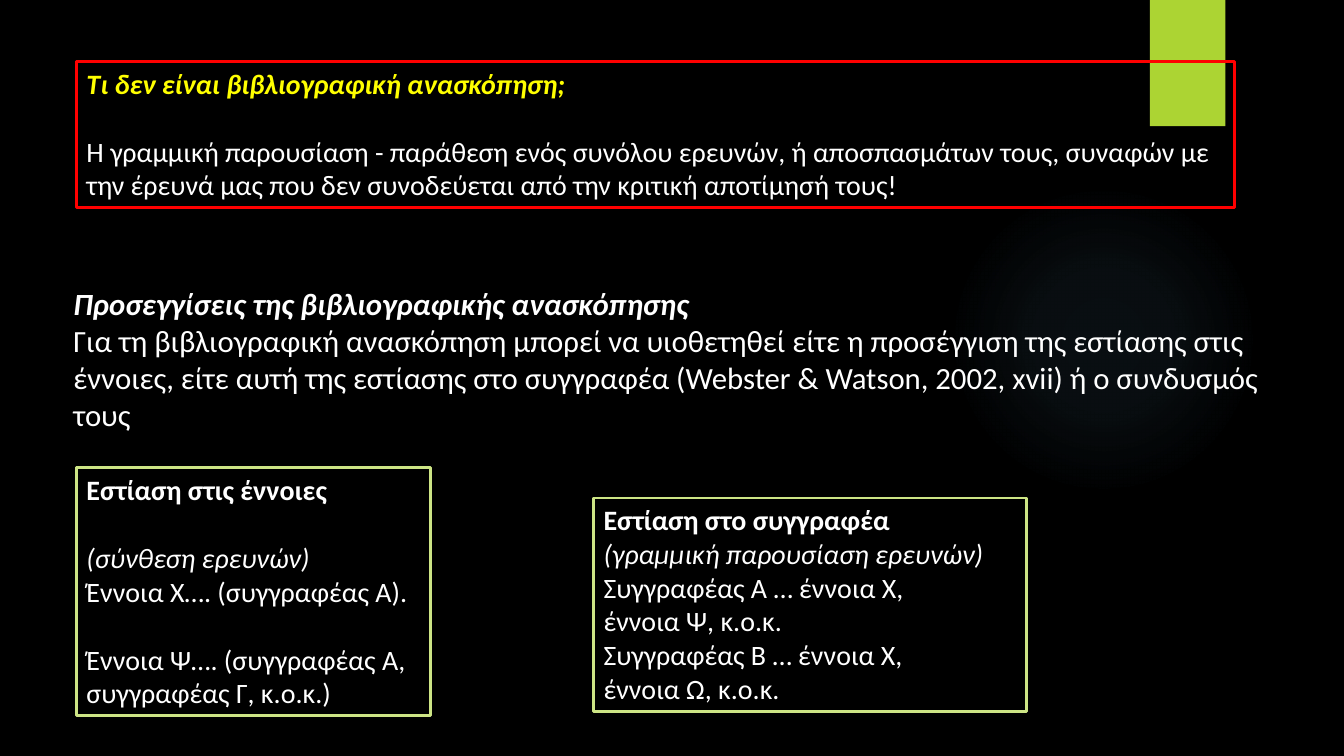
from dataclasses import dataclass

from lxml.etree import SubElement as Sub
from pptx import Presentation
from pptx.dml.color import RGBColor as RGB
from pptx.enum.shapes import MSO_SHAPE as Shape
from pptx.enum.text import MSO_ANCHOR as Anchor, MSO_AUTO_SIZE as Auto, PP_ALIGN as Align
from pptx.oxml.ns import qn
from pptx.util import Cm, Pt


@dataclass(frozen=True)
class Theme:
    font: str = "Calibri"
    body: int = 20
    lead: int = 22
    gap: float = 24.4
    rule: int = 2
    back: RGB = RGB(0x00, 0x00, 0x00)
    text: RGB = RGB(0xFF, 0xFF, 0xFF)
    title: RGB = RGB(0xFF, 0xFF, 0x00)
    alert: RGB = RGB(0xFF, 0x00, 0x00)
    frame: RGB = RGB(0xCD, 0xE5, 0x85)
    tab: RGB = RGB(0xAC, 0xD4, 0x33)
    glow: str = "7AC4F0"


@dataclass(frozen=True)
class Line:
    text: str
    bold: bool = False
    slant: bool = False
    gap: bool = False
    color: RGB = Theme.text


THEME = Theme()

WARNING = [
    Line("Τι δεν είναι βιβλιογραφική ανασκόπηση;", bold=True, slant=True, color=THEME.title),
    Line("Η γραμμική παρουσίαση - παράθεση ενός συνόλου ερευνών, ή αποσπασμάτων τους, "
         "συναφών με την έρευνά μας που δεν συνοδεύεται από την κριτική αποτίμησή τους!", gap=True),
]
METHODS = [
    Line("Προσεγγίσεις της βιβλιογραφικής ανασκόπησης", bold=True, slant=True),
    Line("Για τη βιβλιογραφική ανασκόπηση μπορεί να υιοθετηθεί είτε η προσέγγιση της εστίασης "
         "στις έννοιες, είτε αυτή της εστίασης στο συγγραφέα (Webster & Watson, 2002, xvii) "
         "ή ο συνδυσμός τους"),
]
CONCEPTS = [
    Line("Εστίαση στις έννοιες", bold=True),
    Line("(σύνθεση ερευνών)", slant=True, gap=True),
    Line("Έννοια Χ…. (συγγραφέας Α)."),
    Line("Έννοια Ψ…. (συγγραφέας Α, συγγραφέας Γ, κ.ο.κ.)", gap=True),
]
AUTHORS = [
    Line("Εστίαση στο συγγραφέα", bold=True),
    Line("(γραμμική παρουσίαση ερευνών)", slant=True),
    Line("Συγγραφέας Α … έννοια Χ,"),
    Line("έννοια Ψ, κ.ο.κ."),
    Line("Συγγραφέας Β … έννοια Χ,"),
    Line("έννοια Ω, κ.ο.κ."),
]


def write(frame, lines, size):
    frame.word_wrap = True
    frame.auto_size = Auto.SHAPE_TO_FIT_TEXT
    frame.vertical_anchor = Anchor.TOP
    for i, line in enumerate(lines):
        para = frame.add_paragraph() if i else frame.paragraphs[0]
        para.alignment = Align.LEFT
        if line.gap:
            para.space_before = Pt(THEME.gap)
        run = para.add_run()
        run.text = line.text
        font = run.font
        font.name, font.size = THEME.font, Pt(size)
        font.bold, font.italic = line.bold, line.slant
        font.color.rgb = line.color


def add_plain(slide, kind, area):
    """Add a preset shape with neither shadow nor outline."""
    shape = slide.shapes.add_shape(kind, *map(Cm, area))
    shape.shadow.inherit = False
    shape.line.fill.background()
    return shape


def add_glow(slide, area):
    """Add a circle that fades out from its centre."""
    glow = add_plain(slide, Shape.OVAL, area)
    glow.fill.background()
    props = glow.fill._xPr
    empty = props.find(qn("a:noFill"))
    grad = empty.makeelement(qn("a:gradFill"), {"rotWithShape": "1"})
    props.replace(empty, grad)
    stops = Sub(grad, qn("a:gsLst"))
    for place, alpha in ((0, 7), (36, 6), (69, 0)):
        stop = Sub(stops, qn("a:gs"), pos=str(place * 1000))
        color = Sub(stop, qn("a:srgbClr"), val=THEME.glow)
        Sub(color, qn("a:alpha"), val=str(alpha * 1000))
    radial = Sub(grad, qn("a:path"), {"path": "circle"})
    Sub(radial, qn("a:fillToRect"), dict.fromkeys("ltrb", "50000"))


def add_tab(slide, area):
    tab = add_plain(slide, Shape.RECTANGLE, area)
    tab.fill.solid()
    tab.fill.fore_color.rgb = THEME.tab


def add_frame(slide, area, lines, color):
    box = add_plain(slide, Shape.RECTANGLE, area)
    box.fill.background()
    box.line.color.rgb = color
    box.line.width = Pt(THEME.rule)
    write(box.text_frame, lines, THEME.body)


def add_text(slide, area, lines):
    box = slide.shapes.add_textbox(*map(Cm, area))
    write(box.text_frame, lines, THEME.lead)


def main():
    deck = Presentation()
    deck.slide_width, deck.slide_height = Cm(33.87), Cm(19.05)
    slide = deck.slides.add_slide(deck.slide_layouts[6])
    back = slide.background.fill
    back.solid()
    back.fore_color.rgb = THEME.back

    add_glow(slide, (23.9, 4.65, 7.82, 7.82))
    add_tab(slide, (28.98, 0, 1.9, 3.18))
    add_frame(slide, (1.93, 1.55, 29.18, 3.68), WARNING, THEME.alert)
    add_text(slide, (1.6, 7.06, 31.55, 4.01), METHODS)
    add_frame(slide, (1.93, 11.79, 8.92, 6.25), CONCEPTS, THEME.frame)
    add_frame(slide, (14.96, 12.55, 10.92, 5.38), AUTHORS, THEME.frame)
    deck.save("out.pptx")


if __name__ == "__main__":
    main()
